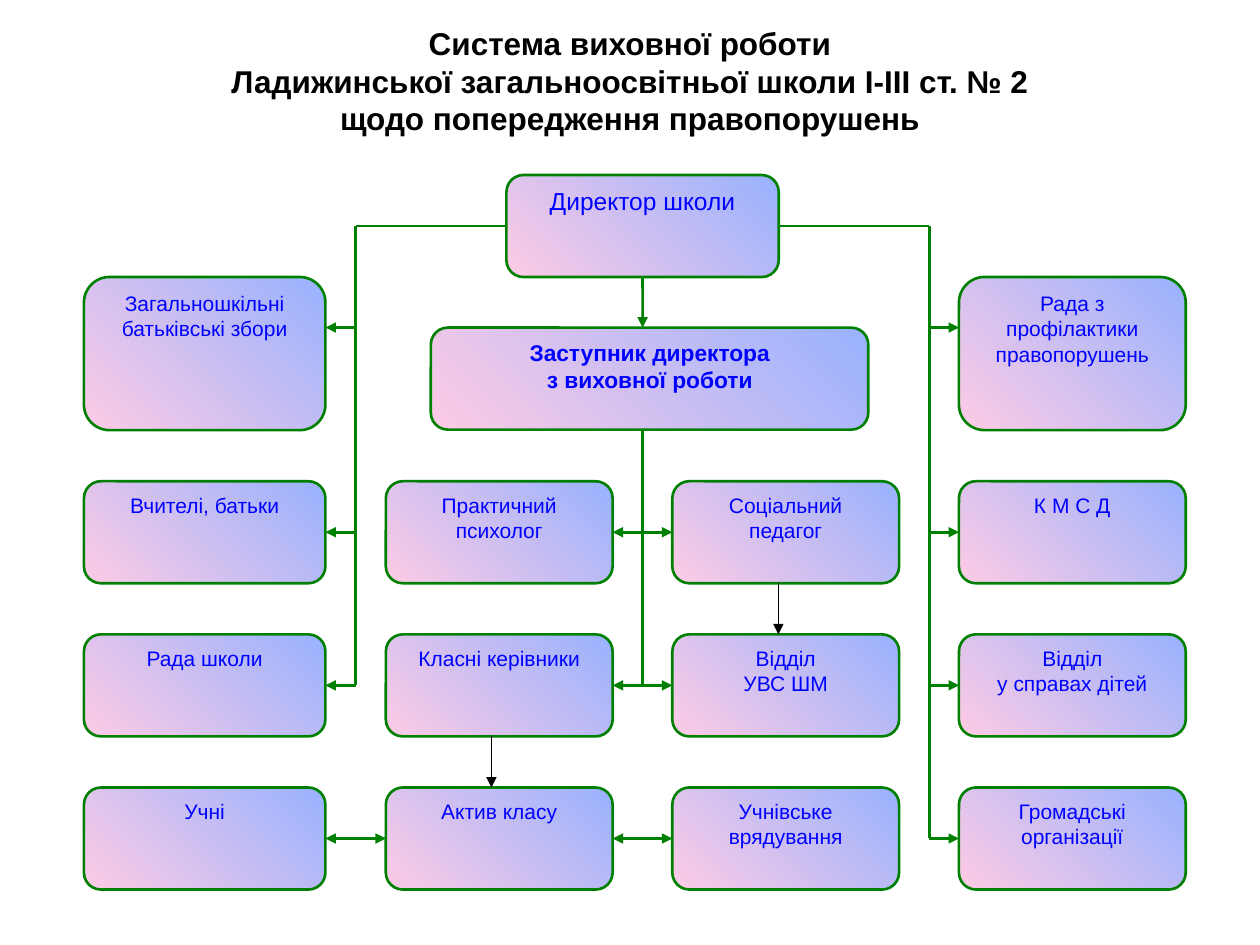
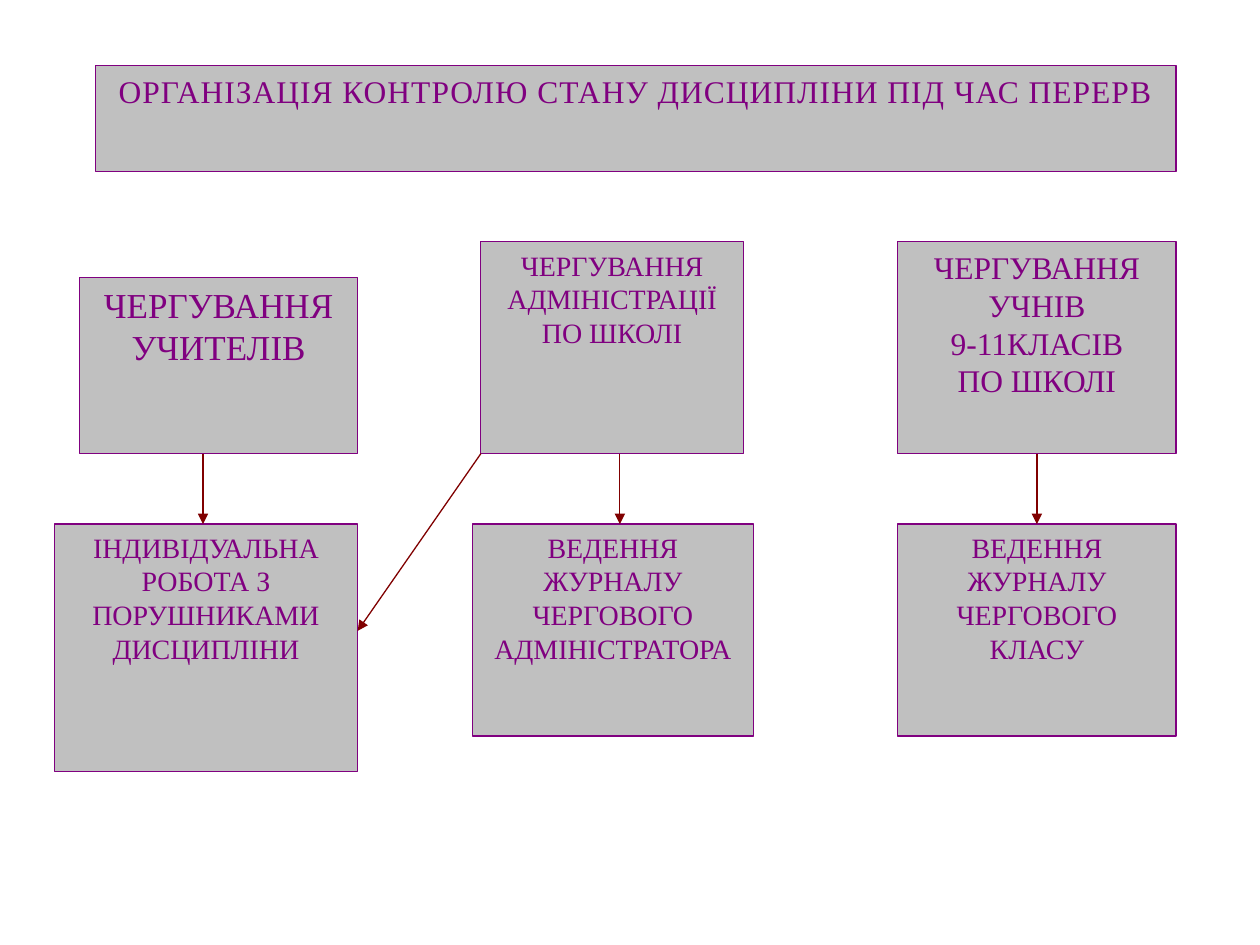
from lxml import etree
from pptx import Presentation
from pptx.dml.color import RGBColor
from pptx.enum.shapes import MSO_CONNECTOR, MSO_SHAPE
from pptx.enum.text import MSO_ANCHOR, MSO_AUTO_SIZE, PP_ALIGN
from pptx.oxml.ns import qn
from pptx.util import Pt

STRAIGHT = MSO_CONNECTOR.STRAIGHT
ROUNDED, RECTANGLE = MSO_SHAPE.ROUNDED_RECTANGLE, MSO_SHAPE.RECTANGLE
TOP, MIDDLE = MSO_ANCHOR.TOP, MSO_ANCHOR.MIDDLE
CENTER = PP_ALIGN.CENTER
TOP_SIDE, LEFT_SIDE, BOTTOM_SIDE, RIGHT_SIDE = range(4)
TITLE_ONLY = 5

BLACK, GREEN, BLUE = "000000", "008000", "0000FF"
PINK, SKY = "FF99CC", "3366FF"
GRAY, PURPLE, MAROON = "C0C0C0", "800080", "800000"

# Slide 1: school structure
SYSTEM_TITLE = ("Система виховної роботи\n"
                "Ладижинської загальноосвітньої школи І-ІІІ ст. № 2\n"
                "щодо попередження правопорушень")
COLUMNS = [(48, 138), (220.5, 129.6), (384.2, 129.6), (548, 129.6)]  # left, width
FIRST_ROW, ROW_STEP, BOX_HEIGHT = 275, 87.5, 58.3
STAFF_ROWS = [
    ["Вчителі, батьки", "Практичний психолог", "Соціальний педагог", "К М С Д"],
    ["Рада школи", "Класні керівники", "Відділ\nУВС ШМ", "Відділ\nу справах дітей"],
    ["Учні", "Актив класу", "Учнівське врядування", "Громадські організації"],
]
COUNCILS = {0: "Загальношкільні батьківські збори",
            3: "Рада з профілактики правопорушень"}
COUNCIL_TOP, COUNCIL_HEIGHT = 158.3, 87.5
DIRECTOR = ("Директор школи", (289.4, 100, 155.6, BOX_HEIGHT), 14, False)
DEPUTY = ("Заступник директора\nз виховної роботи",
          (246.2, 187.2, 250, BOX_HEIGHT), 13, True)
LEFT_TRUNK, SPINE, RIGHT_TRUNK = 203.2, 367.2, 531

# Slide 2: name -> text, (left, top, width, height), size
CONTROL_TITLE = "ОРГАНІЗАЦІЯ КОНТРОЛЮ СТАНУ ДИСЦИПЛІНИ ПІД ЧАС ПЕРЕРВ"
DUTY_BOTTOM, RECORD_TOP = 259.2, 299.5
CONTROL_BOXES = {
    "teachers": ("ЧЕРГУВАННЯ\nУЧИТЕЛІВ", (45.4, 158.4, 159, 100.8), 20),
    "administration": ("ЧЕРГУВАННЯ АДМІНІСТРАЦІЇ ПО ШКОЛІ",
                       (274.8, 138.2, 150, 121), 16),
    "pupils": ("ЧЕРГУВАННЯ\nУЧНІВ\n9-11КЛАСІВ\nПО ШКОЛІ",
               (513, 138.2, 159, 121), 18),
    "offenders": ("ІНДИВІДУАЛЬНА РОБОТА З ПОРУШНИКАМИ ДИСЦИПЛІНИ",
                  (31, RECORD_TOP, 173.4, 141.3), 16),
    "administrator log": ("ВЕДЕННЯ ЖУРНАЛУ ЧЕРГОВОГО АДМІНІСТРАТОРА",
                          (270, RECORD_TOP, 160.5, 121), 16),
    "class log": ("ВЕДЕННЯ ЖУРНАЛУ ЧЕРГОВОГО\nКЛАСУ",
                  (513, RECORD_TOP, 159, 121), 16),
}
CONTROL_ARROWS = [
    (("pupils", BOTTOM_SIDE), ("class log", TOP_SIDE)),
    ((274.8, DUTY_BOTTOM), (204.4, 360.5)),
    ((116, DUTY_BOTTOM), (116, RECORD_TOP)),
    ((354.2, DUTY_BOTTOM), (354.2, RECORD_TOP)),
]


def color(value):
    return RGBColor.from_string(value)


def write_text(shape, text, font, size, ink, bold=False, anchor=TOP):
    frame = shape.text_frame
    frame.text = text
    frame.word_wrap = True
    frame.auto_size = MSO_AUTO_SIZE.NONE
    frame.vertical_anchor = anchor
    for paragraph in frame.paragraphs:
        paragraph.alignment = CENTER
        paragraph.font.name = font
        paragraph.font.size = Pt(size)
        paragraph.font.bold = bold
        paragraph.font.color.rgb = color(ink)


def place_title(slide, area):
    title = slide.shapes.title
    title.left, title.top, title.width, title.height = map(Pt, area)
    return title


def fill_gray(shape):
    shape.fill.solid()
    shape.fill.fore_color.rgb = color(GRAY)


def fill_gradient(shape):
    """Half-transparent pink to blue, from bottom left to top right."""
    shape.fill.gradient()
    shape.fill.gradient_angle = 45
    for stop, value in zip(shape.fill.gradient_stops, (PINK, SKY)):
        stop.color.rgb = color(value)
    for rgb in shape._element.spPr.iter(qn("a:srgbClr")):
        etree.SubElement(rgb, qn("a:alpha"), val="50000")


def outline(shape, ink, width):
    shape.line.color.rgb = color(ink)
    shape.line.width = Pt(width)


def add_box(slide, kind, area):
    box = slide.shapes.add_shape(kind, *map(Pt, area))
    box.shadow.inherit = False
    return box


def add_staff_box(slide, text, area, size=12, bold=False):
    box = add_box(slide, ROUNDED, area)
    fill_gradient(box)
    outline(box, GREEN, 1.5)
    write_text(box, text, "Arial", size, BLUE, bold)
    return box


def add_line(slide, boxes, start, end, ink=GREEN, width=1.5, arrows=()):
    """Each end is a point (x, y) or a joint (key of boxes, side)."""
    free = [(0, 0) if place[0] in boxes else place for place in (start, end)]
    line = slide.shapes.add_connector(STRAIGHT, *map(Pt, free[0] + free[1]))
    for place, connect in ((start, line.begin_connect), (end, line.end_connect)):
        if place[0] in boxes:
            connect(boxes[place[0]], place[1])
    outline(line, ink, width)
    for arrow in arrows:
        etree.SubElement(line.line._get_or_add_ln(), qn(f"a:{arrow}"), type="triangle")
    etree.SubElement(line._element.spPr, qn("a:effectLst"))


def build_system_slide(presentation):
    slide = presentation.slides.add_slide(presentation.slide_layouts[TITLE_ONLY])
    title = place_title(slide, (0, 9, 720, 74))
    write_text(title, SYSTEM_TITLE, "Arial", 18, BLACK, True, MIDDLE)

    boxes = {"director": add_staff_box(slide, *DIRECTOR),
             "deputy": add_staff_box(slide, *DEPUTY)}
    for column, text in COUNCILS.items():
        left, width = COLUMNS[column]
        add_staff_box(slide, text, (left, COUNCIL_TOP, width, COUNCIL_HEIGHT))
    row_tops = [FIRST_ROW + ROW_STEP * row for row in range(len(STAFF_ROWS))]
    for row, texts in enumerate(STAFF_ROWS):
        for column, (text, (left, width)) in enumerate(zip(texts, COLUMNS)):
            area = (left, row_tops[row], width, BOX_HEIGHT)
            boxes[row, column] = add_staff_box(slide, text, area)

    def connect(start, end, *arrows, ink=GREEN, width=1.5):
        add_line(slide, boxes, start, end, ink, width, arrows)

    middles = [top + BOX_HEIGHT / 2 for top in row_tops]
    director_middle = DIRECTOR[1][1] + BOX_HEIGHT / 2
    council_arrow = DEPUTY[1][1]
    left_edge, right_edge = sum(COLUMNS[0]), COLUMNS[3][0]
    trunks = [(LEFT_TRUNK, LEFT_SIDE, 0, left_edge, RIGHT_SIDE, 2),
              (RIGHT_TRUNK, RIGHT_SIDE, 3, right_edge, LEFT_SIDE, 3)]
    for x, director_side, column, council_edge, box_side, row_count in trunks:
        connect(("director", director_side), (x, director_middle))
        connect((x, director_middle), (x, middles[row_count - 1]))
        connect((x, council_arrow), (council_edge, council_arrow), "tailEnd")
        for row in range(row_count):
            connect((x, middles[row]), ((row, column), box_side), "tailEnd")

    connect(("director", BOTTOM_SIDE), (SPINE, council_arrow), "tailEnd")
    connect((SPINE, council_arrow + BOX_HEIGHT), (SPINE, middles[1]))
    for row, column in [(0, 1), (1, 1), (2, 0), (2, 1)]:
        connect(((row, column), RIGHT_SIDE), ((row, column + 1), LEFT_SIDE),
                "headEnd", "tailEnd")
    for x, row in [(444.8, 0), (280.8, 1)]:
        connect((x, row_tops[row] + BOX_HEIGHT), (x, row_tops[row + 1]),
                "tailEnd", ink=BLACK, width=0.75)


def build_control_slide(presentation):
    slide = presentation.slides.add_slide(presentation.slide_layouts[TITLE_ONLY])
    title = place_title(slide, (54.5, 37.4, 617.5, 60.5))
    fill_gray(title)
    outline(title, PURPLE, 0.75)
    write_text(title, CONTROL_TITLE, "Times New Roman", 18, PURPLE)
    # Letter spacing of 0.6 pt spreads the heading across its band
    title.text_frame.paragraphs[0].runs[0]._r.get_or_add_rPr().set("spc", "60")

    boxes = {}
    for name, (text, area, size) in CONTROL_BOXES.items():
        boxes[name] = box = add_box(slide, RECTANGLE, area)
        fill_gray(box)
        outline(box, PURPLE, 0.75)
        write_text(box, text, "Times New Roman", size, PURPLE)
    for start, end in CONTROL_ARROWS:
        add_line(slide, boxes, start, end, MAROON, 0.75, ["tailEnd"])


def main():
    presentation = Presentation()
    presentation.slide_width, presentation.slide_height = Pt(720), Pt(540)
    build_system_slide(presentation)
    build_control_slide(presentation)
    presentation.save("out.pptx")


if __name__ == "__main__":
    main()
